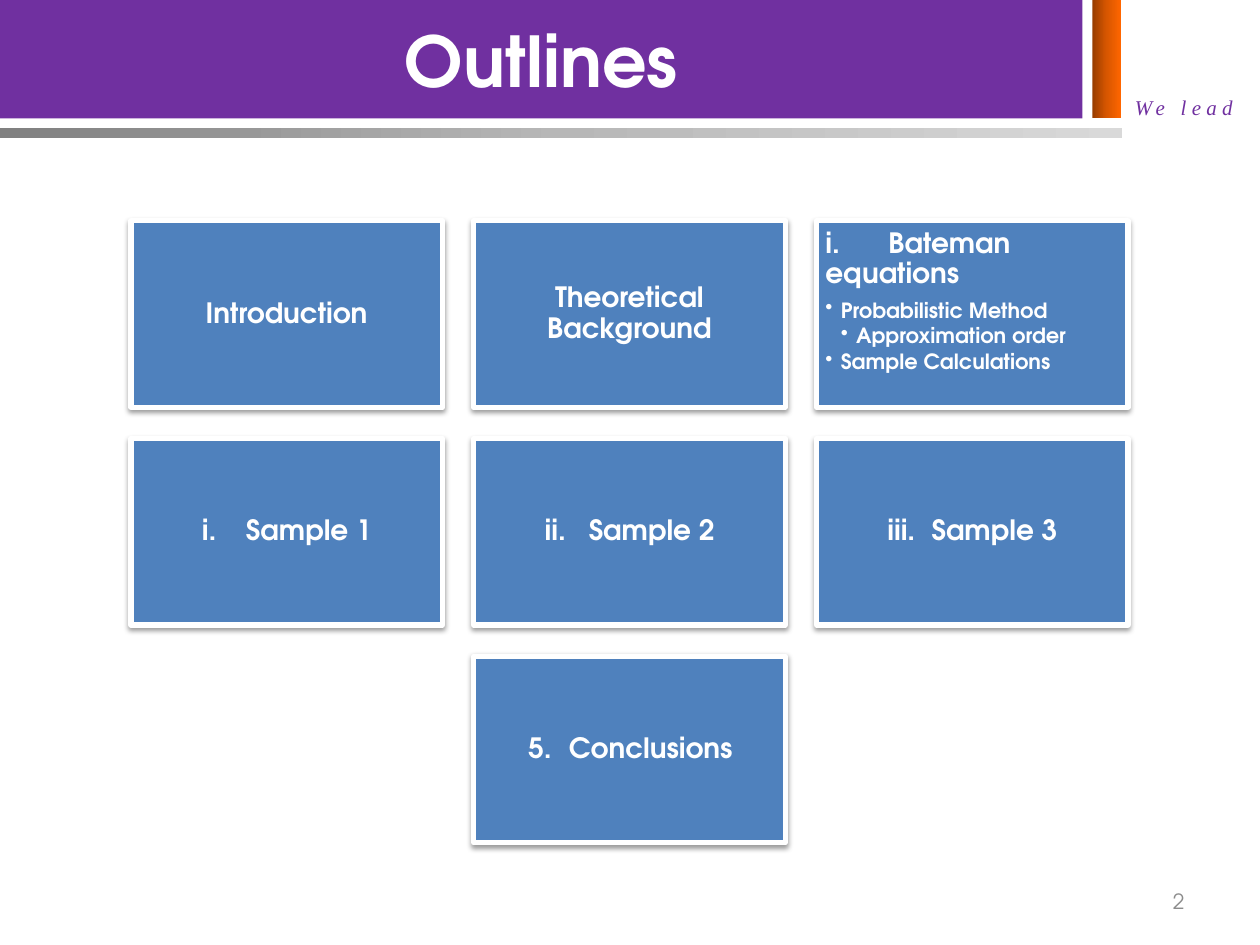
from copy import deepcopy
from dataclasses import dataclass

from lxml import etree
from pptx import Presentation
from pptx.dml.color import RGBColor
from pptx.enum.shapes import MSO_SHAPE
from pptx.enum.text import MSO_ANCHOR, MSO_AUTO_SIZE, PP_ALIGN
from pptx.oxml import parse_xml
from pptx.oxml.ns import nsdecls, qn
from pptx.util import Cm, Pt

RECTANGLE = MSO_SHAPE.RECTANGLE
TOP, MIDDLE = MSO_ANCHOR.TOP, MSO_ANCHOR.MIDDLE
LEFT, CENTER, RIGHT = PP_ALIGN.LEFT, PP_ALIGN.CENTER, PP_ALIGN.RIGHT


@dataclass(frozen=True)
class Theme:
    font: str = "TeX Gyre Adventor"
    tagline_font: str = "Times New Roman"
    purple: str = "7030A0"
    blue: str = "4F81BD"
    white: str = "FFFFFF"
    grey: str = "8C8C8C"
    orange_fade: tuple = ("973C00", "D75600", "FF6600")
    grey_fade: tuple = ("808080", "B7B7B7", "D9D9D9")
    title_size: int = 40
    card_size: int = 16
    small_size: int = 12


THEME = Theme()

CARD_LEFT, CARD_TOP = 2.64, 4.45
CARD_WIDTH, CARD_HEIGHT = 6.28, 3.76
COLUMN_STEP, ROW_STEP = 6.91, 4.39
CARD_INSET = 0.18
BULLET_STEP = 0.31

# column, row, text
PLAIN_CARDS = [(0, 0, "Introduction"), (1, 0, "Theoretical Background")]
# column, row, number, text, number position, text position
NUMBERED_CARDS = [
    (0, 1, "i.", "Sample 1", 1.25, 2.14),
    (1, 1, "ii.", "Sample 2", 1.25, 2.14),
    (2, 1, "iii.", "Sample 3", 1.25, 2.14),
    (1, 2, "5.", "Conclusions", 0.92, 1.74),
]
# level, text
TOPICS = [(1, "Probabilistic Method"), (2, "Approximation order"),
          (1, "Sample Calculations")]


def set_values(target, values):
    for name, value in values.items():
        setattr(target, name, value)


def write(para, text, size, color, align=LEFT, **font):
    para.alignment = align
    span = para.add_run()
    span.text = text
    span.font.color.rgb = RGBColor.from_string(color)
    set_values(span.font, {"name": THEME.font, "size": Pt(size), **font})
    return span


def write_card_line(para, text, size=THEME.card_size, align=LEFT, after=0.35):
    """Write bold white text; after is a share of the type size."""
    set_values(para, {"line_spacing": 0.9, "space_after": Pt(size * after)})
    write(para, text, size, THEME.white, align, bold=True)


def set_indent(para, margin, first_line):
    properties = para._p.get_or_add_pPr()
    properties.set("marL", str(Cm(margin)))
    properties.set("indent", str(Cm(first_line)))
    return properties


def add_bar(page, left, top, width, height):
    bar = page.shapes.add_shape(RECTANGLE, Cm(left), Cm(top), Cm(width), Cm(height))
    bar.shadow.inherit = False
    bar.line.fill.background()
    return bar


def fill_solid(shape, color):
    shape.fill.solid()
    shape.fill.fore_color.rgb = RGBColor.from_string(color)


def fill_fade(shape, colors):
    """Fill from left to right through three evenly spaced colours."""
    shape.fill.gradient()
    shape.fill.gradient_angle = 0
    stop_list = shape._element.spPr.find(".//" + qn("a:gsLst"))
    stop_list.insert(1, deepcopy(stop_list[0]))
    for stop, color, position in zip(shape.fill.gradient_stops, colors, (0, 0.5, 1)):
        stop.color.rgb = RGBColor.from_string(color)
        stop.position = position


def add_text(page, left, top, width, height, anchor=TOP):
    box = page.shapes.add_textbox(Cm(left), Cm(top), Cm(width), Cm(height))
    set_values(box.text_frame, {"word_wrap": True, "vertical_anchor": anchor})
    return box.text_frame.paragraphs[0]


def add_card(page, column, row, anchor=MIDDLE):
    card = add_bar(page, CARD_LEFT + column * COLUMN_STEP, CARD_TOP + row * ROW_STEP,
                   CARD_WIDTH, CARD_HEIGHT)
    fill_solid(card, THEME.blue)
    card.line.color.rgb = RGBColor.from_string(THEME.white)
    card.line.width = Pt(3)
    effects = card._element.spPr.find(qn("a:effectLst"))
    effects.append(parse_xml(
        f'<a:outerShdw {nsdecls("a")} blurRad="{Pt(3.1)}" dist="{Pt(1.6)}" '
        'dir="5400000" rotWithShape="0"><a:srgbClr val="000000">'
        '<a:alpha val="38000"/></a:srgbClr></a:outerShdw>'))
    sides = ("left", "top", "right", "bottom")
    set_values(card.text_frame, {
        "word_wrap": True, "vertical_anchor": anchor,
        **{f"margin_{side}": Cm(CARD_INSET) for side in sides}})
    return card.text_frame


def add_numbered_card(page, column, row, number, text, number_at, text_at):
    para = add_card(page, column, row).paragraphs[0]
    set_indent(para, text_at, number_at - text_at)
    write_card_line(para, f"{number}\t{text}")


def add_topics_card(page):
    frame = add_card(page, 2, 0, TOP)
    heading = frame.paragraphs[0]
    tabs = etree.SubElement(set_indent(heading, 0, 0), qn("a:tabLst"))
    etree.SubElement(tabs, qn("a:tab"), pos=str(Cm(0.79)), algn="l")
    write_card_line(heading, "i.\tBateman equations")
    for level, text in TOPICS:
        para = frame.add_paragraph()
        para.level = level
        properties = set_indent(para, level * BULLET_STEP, -BULLET_STEP)
        etree.SubElement(properties, qn("a:buChar"), char="•")
        write_card_line(para, text, THEME.small_size, after=0.15)


def add_header(page):
    fill_solid(add_bar(page, 0, 0, 21.82, 2.39), THEME.purple)
    fill_fade(add_bar(page, 22.02, 0, 0.58, 2.39), THEME.orange_fade)
    fill_fade(add_bar(page, 0, 2.59, 22.63, 0.2), THEME.grey_fade)
    tagline = write(add_text(page, 22.63, 1.78, 2.77, 0.76), "We lead",
                    THEME.small_size, THEME.purple,
                    name=THEME.tagline_font, italic=True)
    tagline.font._element.set("spc", "300")


def add_title(page, text):
    title = page.shapes.title
    set_values(title, {"left": 0, "top": 0, "width": Cm(21.82), "height": Cm(2.39)})
    set_values(title.text_frame, {"vertical_anchor": MIDDLE, "word_wrap": True,
                                  "auto_size": MSO_AUTO_SIZE.NONE})
    write(title.text_frame.paragraphs[0], text, THEME.title_size, THEME.white,
          CENTER, bold=True)
    # Bring the title in front of the header bars.
    title._element.getparent().append(title._element)


def main():
    deck = Presentation()
    deck.slide_width, deck.slide_height = Cm(25.4), Cm(19.05)
    page = deck.slides.add_slide(deck.slide_layouts[5])
    add_header(page)
    add_title(page, "Outlines")
    write(add_text(page, 18.21, 17.65, 5.92, 1.02, MIDDLE), "2",
          THEME.small_size, THEME.grey, RIGHT)
    for column, row, text in PLAIN_CARDS:
        write_card_line(add_card(page, column, row).paragraphs[0], text, align=CENTER)
    add_topics_card(page)
    for card in NUMBERED_CARDS:
        add_numbered_card(page, *card)
    deck.save("out.pptx")


if __name__ == "__main__":
    main()
